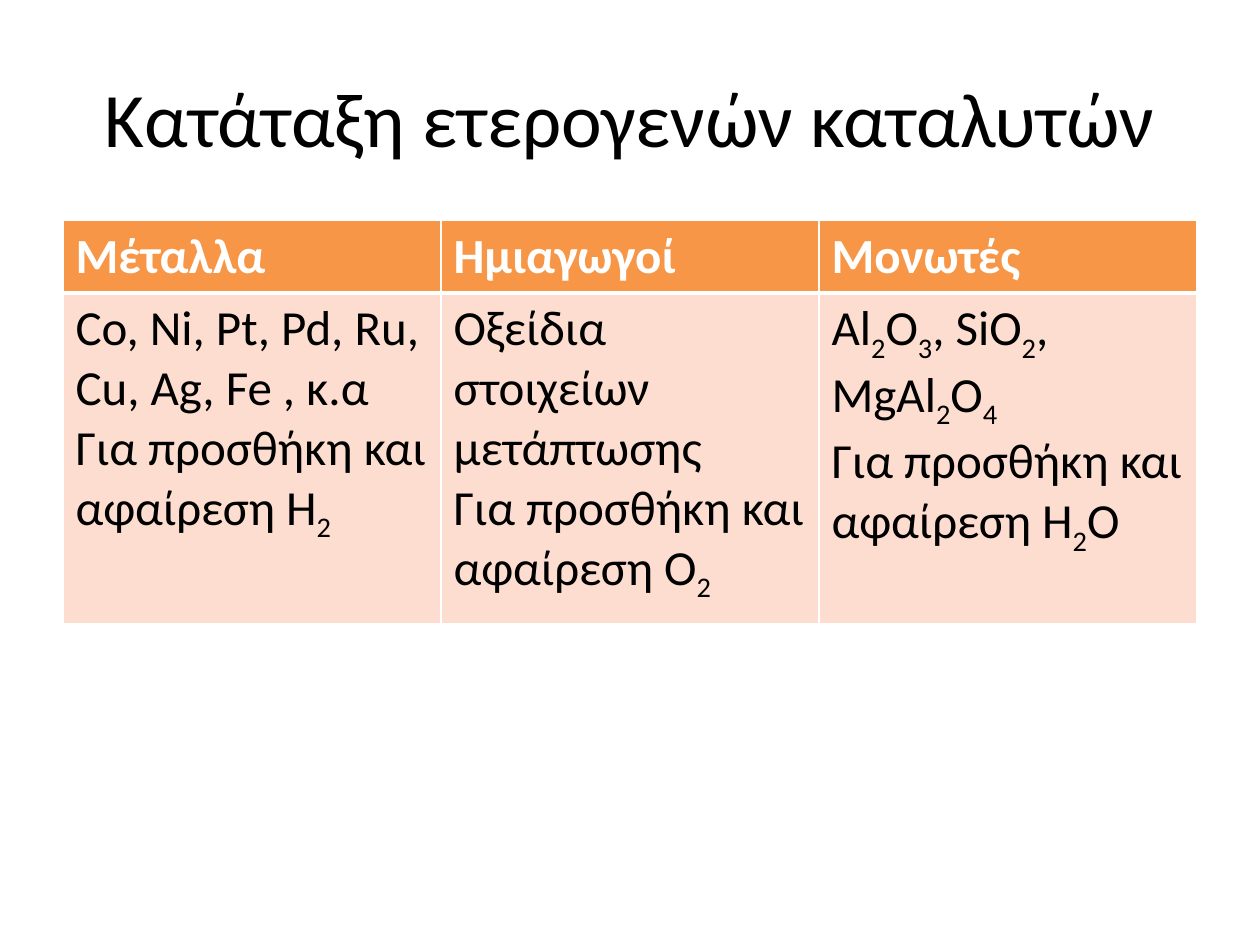
"""Build a slide with a table that classifies heterogeneous catalysts."""
import itertools

import pptx
import pptx.dml.color
import pptx.enum.text
import pptx.oxml
import pptx.oxml.ns
import pptx.util

Pt = pptx.util.Pt

TITLE = "Κατάταξη ετερογενών καταλυτών"
CATALYSTS = [
    ("Μέταλλα", ["Co, Ni, Pt, Pd, Ru, Cu, Ag, Fe , κ.α", "Για προσθήκη και αφαίρεση Η2"]),
    ("Ημιαγωγοί", ["Oξείδια στοιχείων μετάπτωσης", "Για προσθήκη και αφαίρεση Ο2"]),
    ("Μονωτές", ["Al2O3, SiO2, MgAl2O4", "Για προσθήκη και αφαίρεση H2Ο"]),
]
COLORS = {"text": "000000", "light": "FFFFFF", "header": "F79646", "body": "FCDDCF"}
FONT = "Calibri"
LEFT, WIDTH = 36, 648
TABLE_TOP = 126
ROW_HEIGHTS = (41.4, 189)


def rgb(name):
    return pptx.dml.color.RGBColor.from_string(COLORS[name])


def format_run(run, size, color, bold=False):
    run.font.name = FONT
    run.font.size = Pt(size)
    run.font.bold = bold
    run.font.color.rgb = rgb(color)


def add_formula_text(paragraph, text, color, bold):
    for is_subscript, characters in itertools.groupby(text, str.isdigit):
        run = paragraph.add_run()
        run.text = "".join(characters)
        format_run(run, 28, color, bold)
        if is_subscript:
            run.font._element.set("baseline", "-25000")


def set_borders(cell, widths):
    properties = cell._tc.get_or_add_tcPr()
    for side, width in widths.items():
        properties.append(pptx.oxml.parse_xml(
            f'<a:ln{side} {pptx.oxml.ns.nsdecls("a")} w="{Pt(width)}"><a:solidFill>'
            f'<a:srgbClr val="{COLORS["light"]}"/></a:solidFill></a:ln{side}>'))


def fill_cell(cell, lines, fill, color, borders, bold=False):
    set_borders(cell, borders)
    cell.fill.solid()
    cell.fill.fore_color.rgb = rgb(fill)
    for index, line in enumerate(lines):
        text_frame = cell.text_frame
        paragraph = text_frame.add_paragraph() if index else text_frame.paragraphs[0]
        add_formula_text(paragraph, line, color, bold)


def add_title(slide):
    title = slide.shapes.title
    title.left, title.top, title.width, title.height = Pt(LEFT), Pt(21.6), Pt(WIDTH), Pt(90)
    title.text_frame.text = TITLE
    title.text_frame.vertical_anchor = pptx.enum.text.MSO_ANCHOR.MIDDLE
    paragraph = title.text_frame.paragraphs[0]
    paragraph.alignment = pptx.enum.text.PP_ALIGN.CENTER
    format_run(paragraph.runs[0], 44, "text")


def add_catalyst_table(slide):
    table = slide.shapes.add_table(
        len(ROW_HEIGHTS), len(CATALYSTS), Pt(LEFT), Pt(TABLE_TOP),
        Pt(WIDTH), Pt(sum(ROW_HEIGHTS))).table
    for row, height in zip(table.rows, ROW_HEIGHTS):
        row.height = Pt(height)
    for index, (heading, lines) in enumerate(CATALYSTS):
        table.columns[index].width = Pt(WIDTH / len(CATALYSTS))
        fill_cell(table.cell(0, index), [heading], "header", "light",
                  {"L": 1, "R": 1, "T": 1, "B": 3}, bold=True)
        fill_cell(table.cell(1, index), lines, "body", "text",
                  {"L": 1, "R": 1, "T": 3, "B": 1})


def main():
    presentation = pptx.Presentation()
    presentation.slide_width, presentation.slide_height = Pt(720), Pt(540)
    slide = presentation.slides.add_slide(presentation.slide_layouts[5])
    add_title(slide)
    add_catalyst_table(slide)
    presentation.save("out.pptx")


if __name__ == "__main__":
    main()
